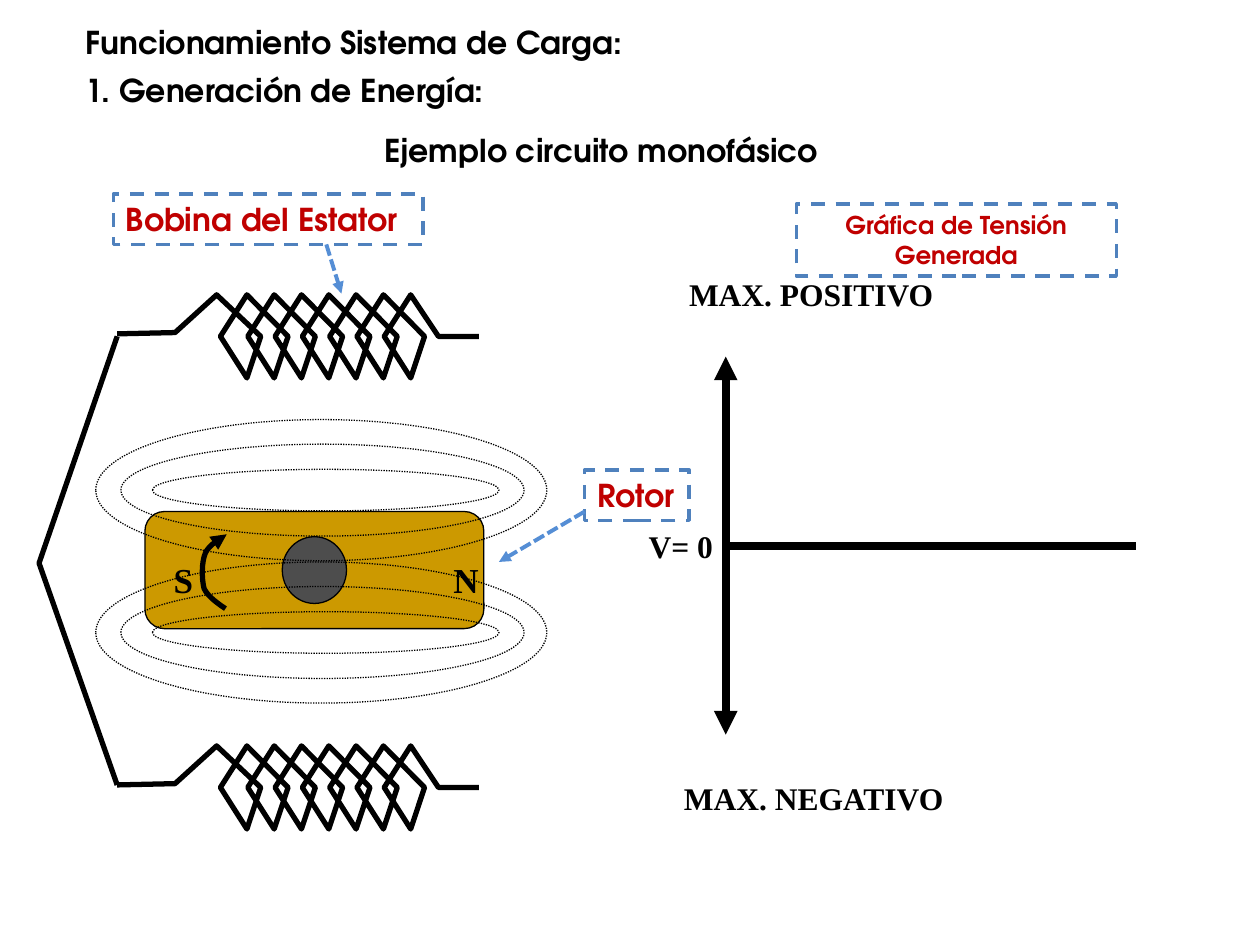
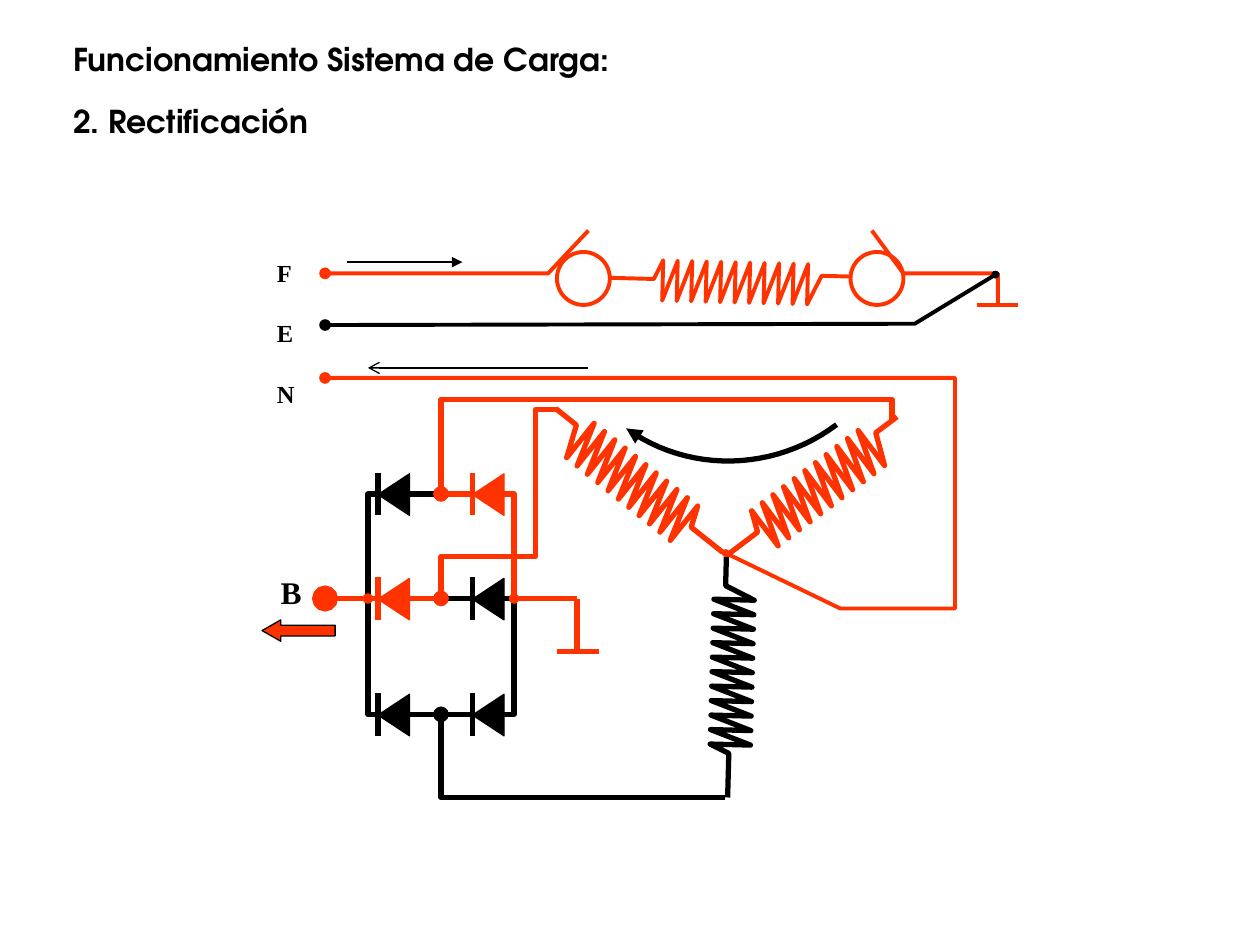
"""Build two slides on how a vehicle charging system generates and rectifies current."""
from dataclasses import dataclass
from math import cos, radians, sin

from lxml.etree import SubElement
from pptx import Presentation
from pptx.dml.color import RGBColor
from pptx.enum.dml import MSO_LINE as DASH
from pptx.enum.shapes import MSO_CONNECTOR as CONN, MSO_SHAPE as SHAPE
from pptx.enum.text import MSO_ANCHOR as ANCHOR, MSO_AUTO_SIZE as FIT, PP_ALIGN as ALIGN
from pptx.oxml.ns import qn
from pptx.util import Cm, Pt


@dataclass(frozen=True)
class Theme:
    black: str = "000000"
    white: str = "FFFFFF"
    live: str = "FF3300"
    label: str = "C00000"
    frame: str = "4F81BD"
    pointer: str = "558ED5"
    rotor: str = "CC9900"
    shaft: str = "4D4D4D"
    sans: str = "TeX Gyre Adventor"
    serif: str = "Times New Roman"
    small: int = 14
    normal: int = 18
    pole: int = 20
    thin: float = 0.75
    dashed: float = 2
    medium: float = 2.25
    wire: float = 3
    axis: float = 4.5


T = Theme()


def inch(v):
    return Cm(v * 2.54)


def rgb(code):
    return RGBColor.from_string(code)


def bezier(a, b, c, d, steps=24):
    pts = []
    for i in range(steps + 1):
        t = i / steps
        u = 1 - t
        pts.append(tuple(u**3 * p + 3 * u * u * t * q + 3 * u * t * t * r + t**3 * w
                         for p, q, r, w in zip(a, b, c, d)))
    return pts


def stator_coil(y):
    pts = [(3.8, y), (3.48, y)]
    for k in range(7):
        x = 3.26 - k * 1.3 / 6
        pts += [(x, y - 0.33), (x - 0.21, y), (x, y + 0.33), (x + 0.11, y)]
    return pts + [(1.72, y - 0.33), (1.39, y - 0.03), (0.93, y - 0.02)]


def winding(cx, cy, angle, kx=1.0, ky=1.0):
    local = [(-0.95, -0.01), (-0.6, -0.01)]
    for k in range(11):
        x = -0.53 + 0.115 * k
        local += [(x, -0.16), (x, 0.16)]
    local += [(0.73, -0.07), (0.96, -0.07)]
    c, sn = cos(radians(angle)), sin(radians(angle))
    return [(cx + kx * x * c - ky * y * sn, cy + kx * x * sn + ky * y * c) for x, y in local]


class Deck:
    def __init__(self, theme):
        self.t = theme
        self.prs = Presentation()
        self.prs.slide_width, self.prs.slide_height = inch(10), inch(7.5)
        self.s = None

    def slide(self, title, subtitle, title_at, subtitle_at):
        self.s = self.prs.slides.add_slide(self.prs.slide_layouts[1])
        for ph, text, at in zip(self.s.placeholders, (title, subtitle), (title_at, subtitle_at)):
            ph.left, ph.top, ph.width, ph.height = map(inch, (*at, 4.6, 0.4))
            self.fill_text(ph.text_frame, [text], self.t.sans)

    def fill_text(self, tf, lines, font, size=None, color=None, align=ALIGN.LEFT,
                  wrap=False, gap=0):
        tf.word_wrap = wrap
        tf.auto_size = FIT.NONE
        tf.vertical_anchor = ANCHOR.TOP
        for i, line in enumerate(lines):
            p = tf.add_paragraph() if i else tf.paragraphs[0]
            pPr = p._p.get_or_add_pPr()
            pPr.set("marL", "0")
            pPr.set("indent", "0")
            SubElement(pPr, qn("a:buNone"))
            p.alignment = align
            p.space_before = Pt(gap if i else 0)
            r = p.add_run()
            r.text = line
            r.font.name, r.font.size, r.font.bold = font, Pt(size or self.t.normal), True
            r.font.color.rgb = rgb(color or self.t.black)

    def text(self, at, *lines, font=None, **style):
        box = self.s.shapes.add_textbox(*map(inch, at))
        self.fill_text(box.text_frame, lines, font or self.t.serif, **style)
        return box

    def callout(self, at, text, **style):
        box = self.text(at, text, font=self.t.sans, color=self.t.label, **style)
        box.fill.solid()
        box.fill.fore_color.rgb = rgb(self.t.white)
        self.stroke(box, self.t.frame, self.t.dashed, DASH.DASH)

    def stroke(self, shape, color=None, width=None, dash=None, head=None, tail=None):
        shape.line.color.rgb = rgb(color or self.t.black)
        shape.line.width = Pt(width or self.t.wire)
        if dash:
            shape.line.dash_style = dash
        spPr = shape.element.spPr
        for tag, end in (("a:headEnd", head), ("a:tailEnd", tail)):
            if end:
                kind, _, size = end.partition("-")
                size = size or "med"
                SubElement(spPr.find(qn("a:ln")), qn(tag), type=kind, w=size, len=size)
        SubElement(spPr, qn("a:effectLst"))

    def line(self, start, end, **style):
        c = self.s.shapes.add_connector(CONN.STRAIGHT, *map(inch, (*start, *end)))
        self.stroke(c, **style)

    def polyline(self, pts, **style):
        pts = [(inch(x), inch(y)) for x, y in pts]
        builder = self.s.shapes.build_freeform(*pts[0])
        builder.add_line_segments(pts[1:], close=False)
        shape = builder.convert_to_shape()
        shape.fill.background()
        self.stroke(shape, **style)

    def shape(self, kind, at, fill=None, color=None, width=None, dash=None, turn=0, adj=()):
        shape = self.s.shapes.add_shape(kind, *map(inch, at))
        shape.rotation = turn
        for i, v in enumerate(adj):
            shape.adjustments[i] = v
        if fill:
            shape.fill.solid()
            shape.fill.fore_color.rgb = rgb(fill)
        else:
            shape.fill.background()
        self.stroke(shape, color, width or self.t.thin, dash)

    def diode(self, x, y, color):
        self.shape(SHAPE.ISOSCELES_TRIANGLE, (x - 0.04, y - 0.12, 0.33, 0.25),
                   color, color, turn=270)
        self.line((x, y - 0.17), (x, y + 0.17), color=color)


def generation(d):
    d.slide("Funcionamiento Sistema de Carga:", "1. Generación de Energía:",
            (0.58, 0.13), (0.58, 0.51))
    for y in (2.67, 6.25):
        d.polyline(stator_coil(y))
    d.polyline([(0.93, 2.67), (0.31, 4.47), (0.93, 6.23)])

    d.line((5.76, 4.33), (9.02, 4.33), width=T.axis)
    d.line((5.76, 2.83), (5.76, 5.83), width=T.axis, head="triangle", tail="triangle")
    d.text((5.37, 2.13, 2.15, 0.4), "MAX. POSITIVO")
    d.text((5.33, 6.13, 2.28, 0.4), "MAX. NEGATIVO")
    d.text((5.05, 4.13, 0.71, 0.4), "V= 0")

    d.shape(SHAPE.ROUNDED_RECTANGLE, (1.15, 4.06, 2.69, 0.93), T.rotor, adj=[0.167])
    d.shape(SHAPE.OVAL, (2.24, 4.26, 0.51, 0.53), T.shaft)
    for x, pole in ((1.28, "S"), (3.5, "N")):
        d.text((x, 4.38, 0.4, 0.43), pole, size=T.pole)
    for y in (3.89, 5.02):
        for x, w, h in ((0.76, 3.58, 1.12), (0.96, 3.2, 0.73), (1.21, 2.75, 0.33)):
            d.shape(SHAPE.OVAL, (x, y - h / 2, w, h), dash=DASH.ROUND_DOT)
    spin = bezier((1.79, 4.83), (1.76, 4.81), (1.65, 4.74), (1.62, 4.67), 8)
    spin += bezier((1.62, 4.67), (1.6, 4.59), (1.6, 4.46), (1.63, 4.39), 8)[1:]
    spin += bezier((1.63, 4.39), (1.66, 4.32), (1.76, 4.27), (1.8, 4.24), 8)[1:]
    d.polyline(spin, tail="triangle")

    d.text((2.95, 0.99, 3.82, 0.4), "Ejemplo circuito monofásico", font=T.sans)
    d.callout((0.9, 1.54, 2.46, 0.4), "Bobina del Estator")
    d.callout((4.64, 3.73, 0.83, 0.4), "Rotor")
    d.callout((6.32, 1.62, 2.54, 0.57), "Gráfica de Tensión Generada",
              size=T.small, align=ALIGN.CENTER, wrap=True)
    for start, end in (((2.59, 1.94), (2.71, 2.33)), ((4.64, 4.06), (3.96, 4.46))):
        d.line(start, end, color=T.pointer, width=T.medium, dash=DASH.SQUARE_DOT,
               tail="triangle")


def rectification(d):
    d.slide("Funcionamiento Sistema de Carga:", "2. Rectificación",
            (0.48, 0.27), (0.48, 0.76))
    live = {"color": T.live}
    field = {"color": T.live, "width": T.medium}
    top, mid, low = 3.92, 4.75, 5.67

    d.polyline(winding(5.05, 3.85, 38.6, -0.915, 1.09), **live)
    d.polyline(winding(6.46, 3.9, 323, 0.92, 1.09), **live)
    d.polyline(winding(5.81, 5.38, 271.5))
    d.polyline(winding(5.79, 2.24, 1.5), **field)
    for x in (4.42, 6.75):
        d.shape(SHAPE.OVAL, (x, 2, 0.42, 0.42), **field)
    d.polyline([(6.92, 1.83), (7.17, 2.17), (7.92, 2.17), (7.92, 2.42)], **field)
    d.line((7.75, 2.42), (8.08, 2.42), **field)
    d.polyline([(4.67, 1.83), (4.35, 2.17), (2.58, 2.17)], tail="oval", **field)
    d.polyline([(2.58, 3), (7.58, 3), (7.58, 4.83), (6.67, 4.83), (5.76, 4.39)],
               head="oval", tail="oval-sm", **field)
    d.polyline([(2.58, 2.58), (7.26, 2.57), (7.9, 2.18)], width=T.medium,
               head="oval", tail="oval-sm")

    d.text((2.1, 2, 0.34, 1.73), "F", "E", "N", size=T.small, gap=17.6)
    d.text((2.13, 4.5, 0.37, 0.4), "B")

    rows = ((top, T.black, T.live), (mid, T.live, T.black), (low, T.black, T.black))
    for y, left, right in rows:
        d.diode(3, y, left)
        d.diode(3.75, y, right)
        d.line((3.25, y), (3.5, y), color=left)
        d.line((3.5, y), (3.75, y), color=right)
    for inner, outer, y, color in ((4, 4.08, top, T.live), (4, 4.08, low, T.black),
                                   (3, 2.92, top, T.black), (3, 2.92, low, T.black)):
        d.polyline([(inner, y), (outer, y), (outer, mid)], color=color)

    d.polyline(bezier((4.97, 3.4), (5.47, 3.76), (6.15, 3.74), (6.64, 3.37)),
               head="triangle")
    d.polyline([(4.42, 3.25), (4.25, 3.25), (4.25, 4.42), (3.5, 4.42), (3.5, mid)],
               tail="oval", **live)
    d.polyline([(5.75, 6.33), (3.5, 6.33), (3.5, low)], tail="oval")
    d.polyline([(3.5, top), (3.5, 3.17), (7.08, 3.17), (7.08, 3.33)], head="oval", **live)

    d.line((2.92, mid), (3, mid), **live)
    d.line((2.92, mid), (2.58, mid), head="oval-sm", tail="oval-lg", **live)
    d.line((4, mid), (4.08, mid))
    d.line((4.58, mid), (4.58, 5.17), **live)
    d.line((4.42, 5.17), (4.75, 5.17), **live)
    d.line((4.08, mid), (4.58, mid), head="oval-sm", **live)
    d.line((2.75, 2.08), (3.67, 2.08), width=T.thin, tail="triangle")
    d.line((4.67, 2.92), (2.92, 2.92), width=T.thin, tail="arrow")
    d.shape(SHAPE.LEFT_ARROW, (2.08, 4.92, 0.58, 0.17), T.live, adj=[0.5, 0.875])


def main():
    d = Deck(T)
    generation(d)
    rectification(d)
    d.prs.save("out.pptx")


if __name__ == "__main__":
    main()
